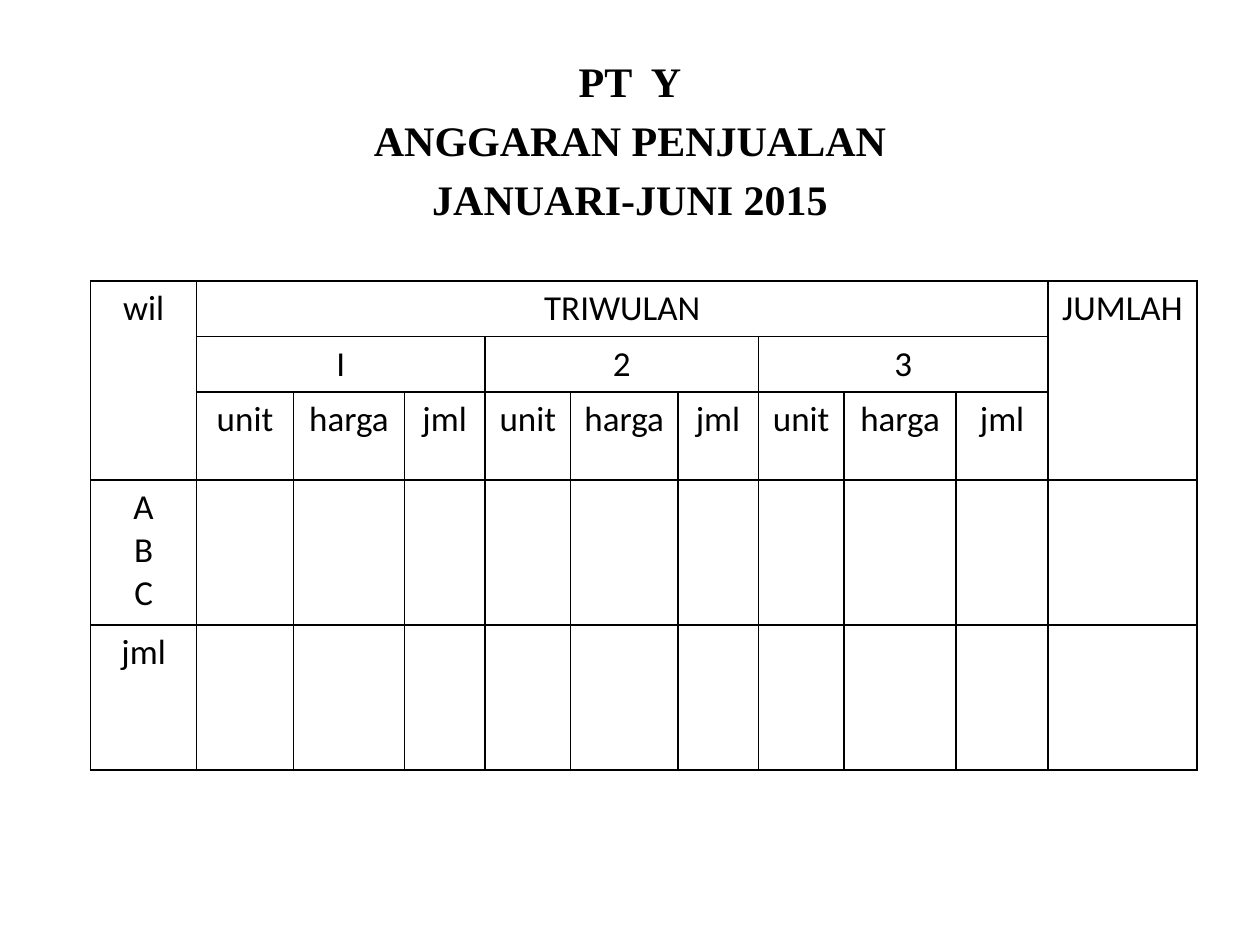
from dataclasses import dataclass

from lxml import etree
from pptx import Presentation
from pptx.dml.color import RGBColor
from pptx.enum import text
from pptx.oxml import ns
from pptx.util import Inches, Pt


@dataclass(frozen=True)
class Theme:
    ink: RGBColor = RGBColor(0, 0, 0)
    head: str = "Times New Roman"
    body: str = "Calibri"
    big: int = 24
    small: int = 20
    rule: int = 1


THEME = Theme()
HEADING = ["PT  Y", "ANGGARAN PENJUALAN", "JANUARI-JUNI 2015"]
COLS = [0.84, 0.77, 0.88, 0.64, 0.68, 0.85, 0.64, 0.68, 0.89, 0.73, 1.18]
ROWS = [0.43, 0.43, 0.7, 1.15, 1.15]
QUARTERS = ["I", "2", "3"]
FIELDS = ["unit", "harga", "jml"]


def style(para, face, size, bold=False):
    para.alignment = text.PP_ALIGN.CENTER
    font = para.font
    font.name, font.size, font.bold = face, Pt(size), bold
    font.color.rgb = THEME.ink


def add_heading(slide, lines):
    box = slide.placeholders[1]
    box.left, box.top = Inches(0.5), Inches(0.39)
    box.width, box.height = Inches(9), Inches(6.63)
    frame = box.text_frame
    frame.text = "\n".join(lines)
    for i, para in enumerate(frame.paragraphs):
        # Centred lines carry no bullet or hanging indent
        props = para._p.get_or_add_pPr()
        props.set("marL", "0")
        props.set("indent", "0")
        etree.SubElement(props, ns.qn("a:buNone"))
        para.space_before = Pt(0.2 * THEME.big if i else 0)
        style(para, THEME.head, THEME.big, bold=True)


def add_rules(cell):
    props = cell._tc.get_or_add_tcPr()
    for side in ("lnL", "lnR", "lnT", "lnB"):
        line = etree.SubElement(props, ns.qn(f"a:{side}"), w=str(Pt(THEME.rule)))
        fill = etree.SubElement(line, ns.qn("a:solidFill"))
        etree.SubElement(fill, ns.qn("a:srgbClr"), val=str(THEME.ink))


def add_grid(slide):
    shape = slide.shapes.add_table(
        len(ROWS), len(COLS), Inches(0.72), Inches(2.23),
        Inches(sum(COLS)), Inches(sum(ROWS)))
    table = shape.table
    table.first_row = table.horz_banding = False
    for col, width in zip(table.columns, COLS):
        col.width = Inches(width)
    for row, height in zip(table.rows, ROWS):
        row.height = Inches(height)
    for cell in table.iter_cells():
        add_rules(cell)
        cell.fill.background()
    return table


def put(table, row, col, words, down=1, across=1):
    cell = table.cell(row, col)
    if down > 1 or across > 1:
        cell.merge(table.cell(row + down - 1, col + across - 1))
    cell.text = words
    for para in cell.text_frame.paragraphs:
        style(para, THEME.body, THEME.small)


def fill_grid(table):
    # Header: region, quarters with their fields, total
    span = len(FIELDS)
    put(table, 0, 0, "wil", down=3)
    put(table, 0, 1, "TRIWULAN", across=span * len(QUARTERS))
    put(table, 0, len(COLS) - 1, "JUMLAH", down=3)
    for i, name in enumerate(QUARTERS):
        first = 1 + i * span
        put(table, 1, first, name, across=span)
        for j, field in enumerate(FIELDS):
            put(table, 2, first + j, field)
    # Region rows
    put(table, 3, 0, "A\nB\nC")
    put(table, 4, 0, "jml")


def main():
    deck = Presentation()
    deck.slide_width, deck.slide_height = Inches(10), Inches(7.5)
    slide = deck.slides.add_slide(deck.slide_layouts[1])
    # The heading sits in the body, so the title is not needed
    title = slide.shapes.title.element
    title.getparent().remove(title)
    add_heading(slide, HEADING)
    fill_grid(add_grid(slide))
    deck.save("out.pptx")


if __name__ == "__main__":
    main()
